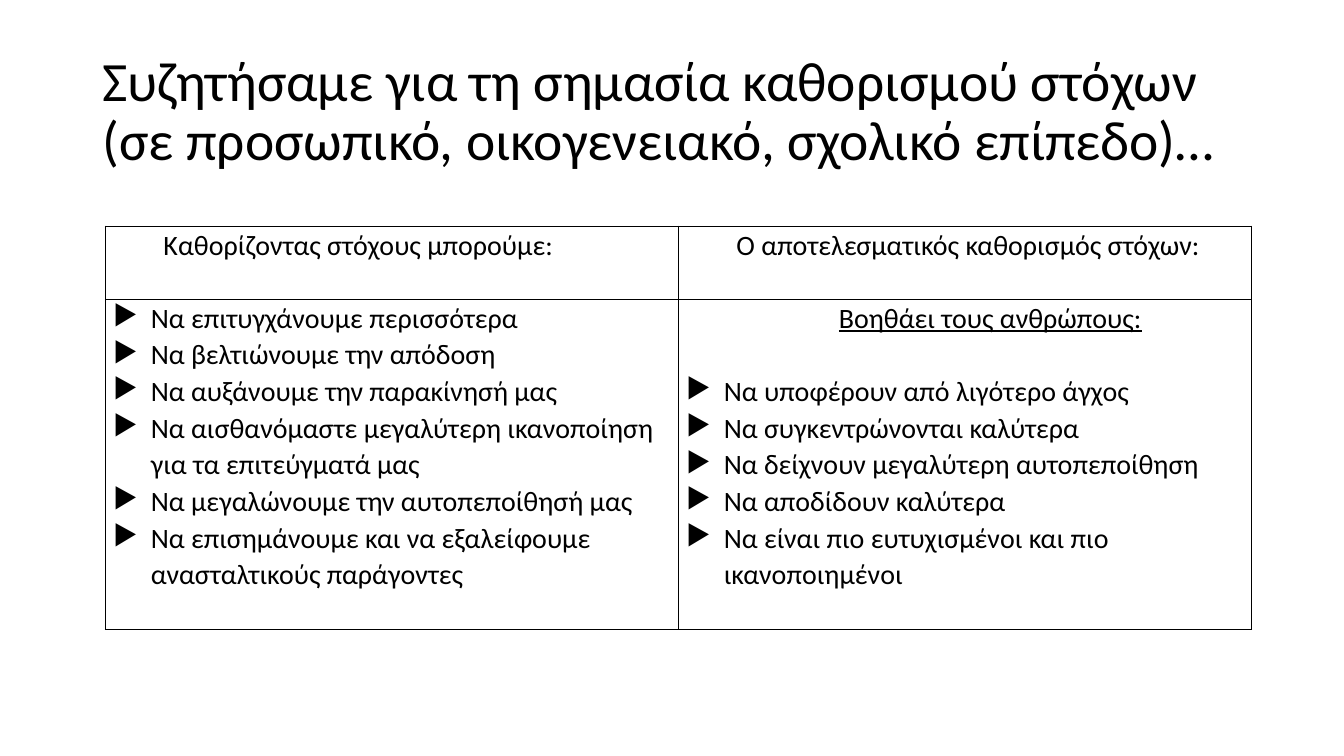
from pptx import Presentation
from pptx.dml.color import RGBColor
from pptx.enum.text import MSO_ANCHOR, PP_ALIGN as Align
from pptx.oxml import parse_xml
from pptx.oxml.ns import nsdecls
from pptx.util import Cm, Pt

FONT = "Calibri"
INK = "000000"
LINE_GAP = 26.1  # height of one table line, in points

TITLE = ("Συζητήσαμε για τη σημασία καθορισμού στόχων "
         "(σε προσωπικό, οικογενειακό, σχολικό επίπεδο)…")
HEADINGS = ["Καθορίζοντας στόχους μπορούμε:",
            "Ο αποτελεσματικός καθορισμός στόχων:"]
LEAD = "Βοηθάει τους ανθρώπους:"
ABILITIES = [
    "Να επιτυγχάνουμε περισσότερα",
    "Να βελτιώνουμε την απόδοση",
    "Να αυξάνουμε την παρακίνησή μας",
    "Να αισθανόμαστε μεγαλύτερη ικανοποίηση για τα επιτεύγματά μας",
    "Να μεγαλώνουμε την αυτοπεποίθησή μας",
    "Να επισημάνουμε και να εξαλείφουμε ανασταλτικούς παράγοντες",
]
BENEFITS = [
    "Να υποφέρουν από λιγότερο άγχος",
    "Να συγκεντρώνονται καλύτερα",
    "Να δείχνουν μεγαλύτερη αυτοπεποίθηση",
    "Να αποδίδουν καλύτερα",
    "Να είναι πιο ευτυχισμένοι και πιο ικανοποιημένοι",
]


def color(value):
    return RGBColor.from_string(value)


def write(frame, text, size=20, align=Align.LEFT, spacing=1.07, after=0,
          underline=None, left=0.0, hanging=0.0, bullet=None):
    """Fill the empty first paragraph, or add one, and format it."""
    first = frame.paragraphs[0]
    para = frame.add_paragraph() if first.runs else first
    para.alignment = align
    para.line_spacing = spacing
    para.space_before = Pt(0)
    para.space_after = Pt(after)
    span = para.add_run()
    span.text = text
    span.font.name = FONT
    span.font.size = Pt(size)
    span.font.underline = underline
    span.font.color.rgb = color(INK)
    # Indents and bullet
    props = para._p.get_or_add_pPr()
    props.set("marL", str(Cm(left)))
    props.set("indent", str(-Cm(hanging)))
    if bullet:
        props.append(parse_xml(f'<a:buChar {nsdecls("a")} char="{bullet}"/>'))


def write_list(frame, items):
    for item in items:
        write(frame, item, left=0.95, hanging=0.95, bullet="▶")


def style_cell(cell):
    """Thin border on every side, narrow margins, no fill."""
    props = cell._tc.get_or_add_tcPr()
    for side in ("lnL", "lnR", "lnT", "lnB"):
        props.append(parse_xml(
            f'<a:{side} {nsdecls("a")} w="{Pt(1)}"><a:solidFill>'
            f'<a:srgbClr val="{INK}"/></a:solidFill></a:{side}>'))
    cell.fill.background()
    cell.margin_left = cell.margin_right = Cm(0.19)
    cell.margin_top = cell.margin_bottom = 0


def add_title(page, left, top, width, height):
    box = page.shapes.add_textbox(Cm(left), Cm(top), Cm(width), Cm(height))
    frame = box.text_frame
    frame.word_wrap = True
    frame.vertical_anchor = MSO_ANCHOR.MIDDLE
    write(frame, TITLE, size=39.6, spacing=0.9)


def add_goals_table(page, left, top, width, height, header_height):
    table = page.shapes.add_table(
        2, 2, Cm(left), Cm(top), Cm(width), Cm(height)).table
    table.first_row = table.horz_banding = False
    table.rows[0].height = Cm(header_height)
    table.rows[1].height = Cm(height - header_height)
    for cell in table.iter_cells():
        style_cell(cell)

    # Header row
    for column, heading in enumerate(HEADINGS):
        write(table.cell(0, column).text_frame, heading, left=1.27)

    # Body row
    write_list(table.cell(1, 0).text_frame, ABILITIES)
    benefits = table.cell(1, 1).text_frame
    write(benefits, LEAD, align=Align.CENTER, left=1.27,
          underline=True, after=LINE_GAP)
    write_list(benefits, BENEFITS)


def main():
    deck = Presentation()
    deck.slide_width, deck.slide_height = Cm(33.87), Cm(19.05)
    page = deck.slides.add_slide(deck.slide_layouts[6])
    add_title(page, 2.33, 1.01, 29.21, 3.68)
    add_goals_table(page, 2.66, 5.7, 28.88, 10.16, header_height=1.84)
    deck.save("out.pptx")


if __name__ == "__main__":
    main()
